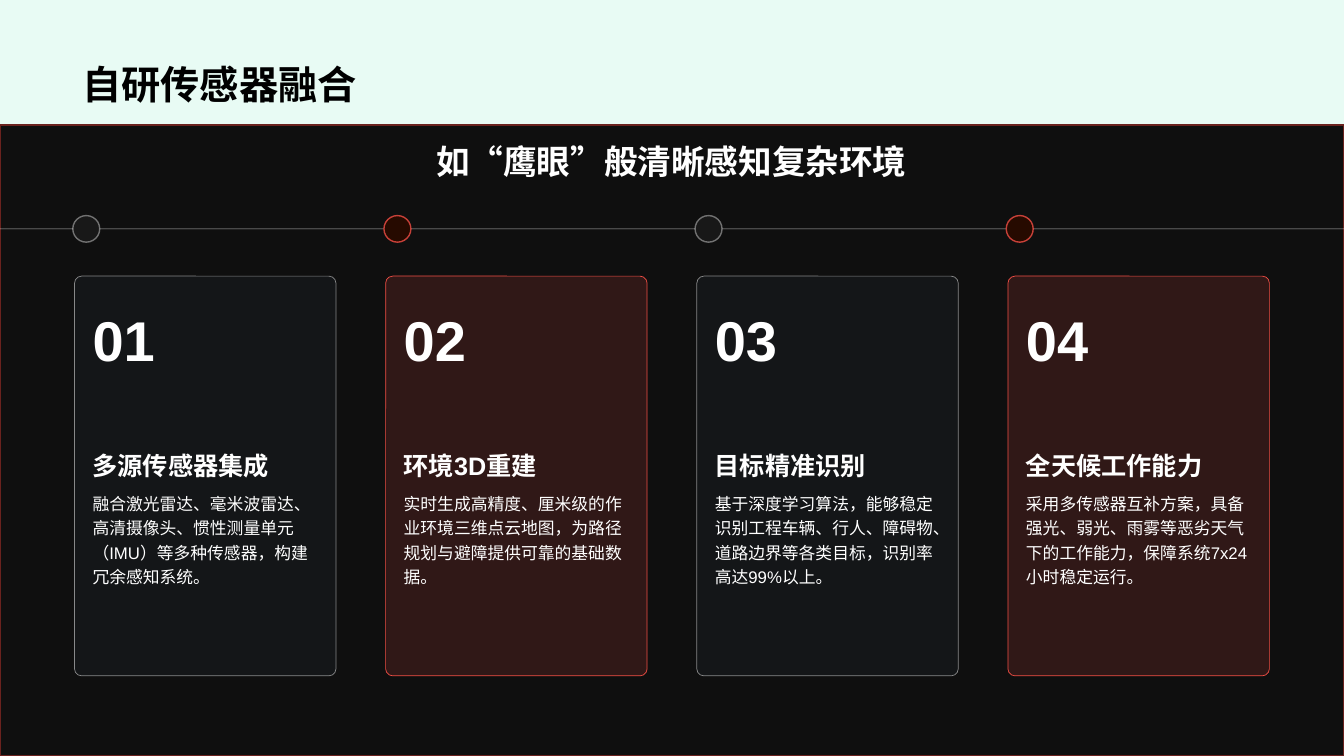
"""Build a slide on sensor fusion with a timeline and four numbered cards."""
from pptx import Presentation
from pptx.dml.color import RGBColor
from pptx.enum.shapes import MSO_CONNECTOR, MSO_SHAPE
from pptx.enum.text import MSO_ANCHOR, MSO_AUTO_SIZE, PP_ALIGN
from pptx.oxml.xmlchemy import OxmlElement
from pptx.util import Pt

MINT = RGBColor(0xE8, 0xFB, 0xF4)
BLACK = RGBColor(0x00, 0x00, 0x00)
WHITE = RGBColor(0xFF, 0xFF, 0xFF)
PANEL = RGBColor(0x0F, 0x0F, 0x0F)
PANEL_EDGE = RGBColor(0x6A, 0x22, 0x1E)
SLATE = RGBColor(0x44, 0x54, 0x6A)
RED = RGBColor(0xF2, 0x4E, 0x45)
GREY_DOT = RGBColor(0x18, 0x18, 0x18)
RED_DOT = RGBColor(0x26, 0x0A, 0x00)

SLIDE_WIDTH, SLIDE_HEIGHT = 960, 540
PANEL_TOP = 89.25
TIMELINE_Y = 163.5
MARGIN, CONTENT_WIDTH = 51.75, 855.5
CARD_LEFT, CARD_TOP, CARD_PITCH = 53.25, 197.25, 222.25
CARD_WIDTH, CARD_HEIGHT = 186.75, 285.5
TEXT_INDENT, TEXT_WIDTH = 5.75, 175.5
DOT_WIDTH, DOT_HEIGHT = 19.25, 19

CARDS = [
    ("多源传感器集成",
     "融合激光雷达、毫米波雷达、高清摄像头、惯性测量单元（IMU）等多种传感器，构建冗余感知系统。"),
    ("环境3D重建",
     "实时生成高精度、厘米级的作业环境三维点云地图，为路径规划与避障提供可靠的基础数据。"),
    ("目标精准识别",
     "基于深度学习算法，能够稳定识别工程车辆、行人、障碍物、道路边界等各类目标，识别率高达99%以上。"),
    ("全天候工作能力",
     "采用多传感器互补方案，具备强光、弱光、雨雾等恶劣天气下的工作能力，保障系统7x24小时稳定运行。"),
]


def set_opacity(shape, location, percent):
    """Make the solid colour at an XPath location partly transparent."""
    for color in shape.element.spPr.xpath(f"{location}/a:srgbClr"):
        alpha = OxmlElement("a:alpha")
        alpha.set("val", str(percent * 1000))
        color.append(alpha)


def style_line(shape, color, width, opacity=100):
    """Set the colour, width and opacity of an outline or connector."""
    shape.line.color.rgb = color
    shape.line.width = Pt(width)
    if opacity < 100:
        set_opacity(shape, "./a:ln/a:solidFill", opacity)


def add_filled_shape(slide, kind, box, color, opacity=100):
    """Add a flat preset shape with a solid fill."""
    shape = slide.shapes.add_shape(kind, *map(Pt, box))
    shape.shadow.inherit = False
    shape.fill.solid()
    shape.fill.fore_color.rgb = color
    if opacity < 100:
        set_opacity(shape, "./a:solidFill", opacity)
    return shape


def write_text(shape, text, size, color=WHITE, bold=True,
               anchor=MSO_ANCHOR.BOTTOM, align=PP_ALIGN.LEFT, wrap=True, spacing=1.0):
    """Fill a shape with one formatted paragraph."""
    frame = shape.text_frame
    frame.text = text
    frame.word_wrap = wrap
    frame.auto_size = MSO_AUTO_SIZE.NONE
    frame.vertical_anchor = anchor
    paragraph = frame.paragraphs[0]
    paragraph.alignment = align
    paragraph.line_spacing = spacing
    font = paragraph.runs[0].font
    font.name = "Arial"
    font.size = Pt(size)
    font.bold = bold
    font.color.rgb = color


def add_text(slide, box, text, size, **options):
    """Add a text box with one formatted paragraph."""
    write_text(slide.shapes.add_textbox(*map(Pt, box)), text, size, **options)


def add_title(slide, text):
    """Move the title placeholder above the panel and fill it."""
    title = slide.shapes.title
    title.left, title.top = Pt(MARGIN), Pt(10)
    title.width, title.height = Pt(CONTENT_WIDTH), Pt(70.5)
    write_text(title, text, 28, color=BLACK)


def add_timeline(slide):
    """Add the thin line that runs across the slide."""
    timeline = slide.shapes.add_connector(
        MSO_CONNECTOR.STRAIGHT, Pt(0), Pt(TIMELINE_Y), Pt(SLIDE_WIDTH), Pt(TIMELINE_Y))
    style_line(timeline, WHITE, 0.5, 70)
    timeline.element.spPr.append(OxmlElement("a:effectLst"))


def add_card(slide, index, heading, description):
    """Add a numbered card and its timeline dot."""
    left = CARD_LEFT + index * CARD_PITCH
    text_left = left + TEXT_INDENT
    highlighted = index % 2 == 1
    fill, fill_opacity = (RED, 15) if highlighted else (SLATE, 10)
    edge, edge_opacity = (RED, 100) if highlighted else (WHITE, 50)

    card = add_filled_shape(slide, MSO_SHAPE.ROUNDED_RECTANGLE,
                            (left, CARD_TOP, CARD_WIDTH, CARD_HEIGHT), fill, fill_opacity)
    card.adjustments[0] = 0.027
    style_line(card, edge, 0.5, edge_opacity)

    add_text(slide, (text_left, 346.5, TEXT_WIDTH, 127.5), description, 12,
             bold=False, anchor=MSO_ANCHOR.TOP, spacing=1.2)
    add_text(slide, (text_left, 283.5, TEXT_WIDTH, 63), heading, 18)
    add_text(slide, (text_left, 218, 129, 52), f"{index + 1:02d}", 40, wrap=False)

    dot = add_filled_shape(
        slide, MSO_SHAPE.OVAL,
        (left - 1.25, TIMELINE_Y - DOT_HEIGHT / 2, DOT_WIDTH, DOT_HEIGHT),
        RED_DOT if highlighted else GREY_DOT)
    style_line(dot, edge, 1, 80 if highlighted else 40)


def main():
    """Build and save the presentation."""
    presentation = Presentation()
    presentation.slide_width = Pt(SLIDE_WIDTH)
    presentation.slide_height = Pt(SLIDE_HEIGHT)
    slide = presentation.slides.add_slide(presentation.slide_layouts[5])
    slide.background.fill.solid()
    slide.background.fill.fore_color.rgb = MINT

    add_title(slide, "自研传感器融合")
    panel = add_filled_shape(slide, MSO_SHAPE.RECTANGLE,
                             (0, PANEL_TOP, SLIDE_WIDTH, SLIDE_HEIGHT - PANEL_TOP), PANEL)
    style_line(panel, PANEL_EDGE, 1)
    add_timeline(slide)
    add_text(slide, (MARGIN, PANEL_TOP, CONTENT_WIDTH, 52), "如“鹰眼”般清晰感知复杂环境", 24,
             anchor=MSO_ANCHOR.MIDDLE, align=PP_ALIGN.CENTER)
    for index, (heading, description) in enumerate(CARDS):
        add_card(slide, index, heading, description)
    presentation.save("out.pptx")


if __name__ == "__main__":
    main()
